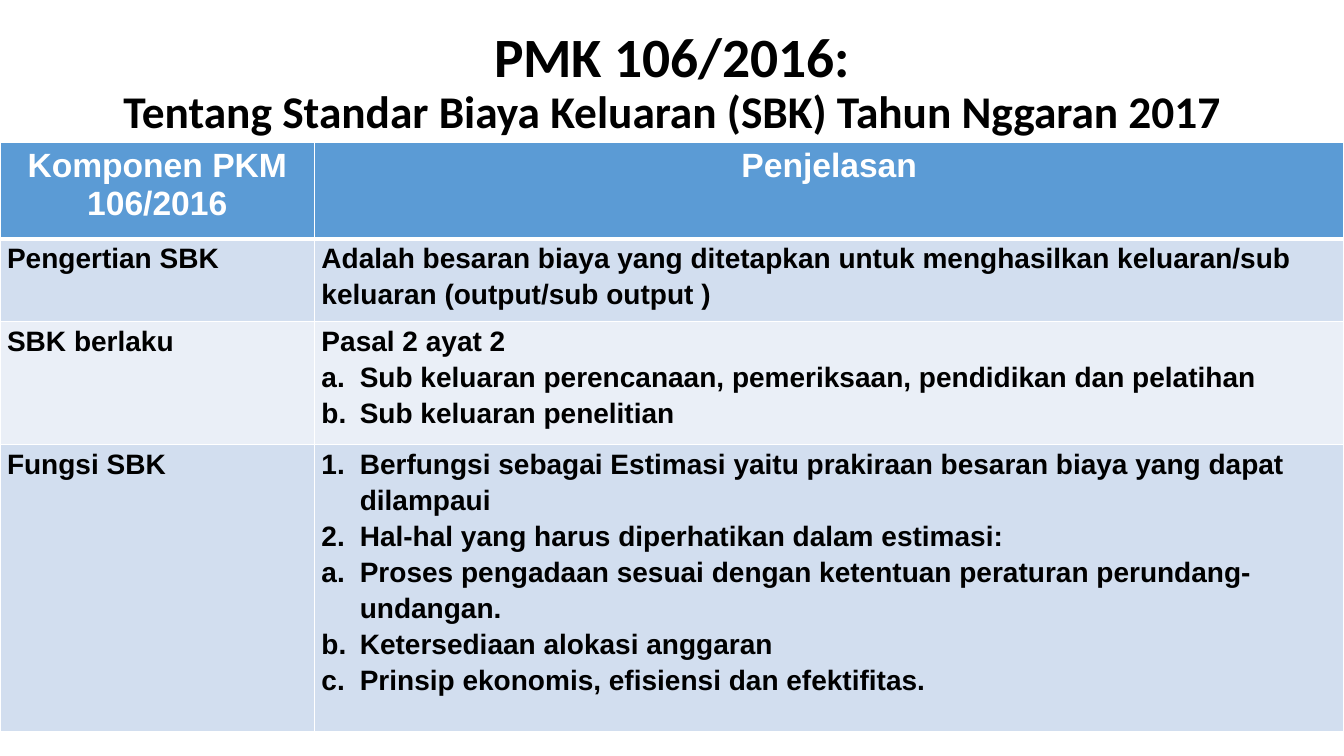
from lxml.etree import SubElement
from pptx import Presentation
from pptx.dml.color import RGBColor as Rgb
from pptx.enum.text import MSO_ANCHOR as Anchor, MSO_AUTO_SIZE as AutoSize, PP_ALIGN as Align
from pptx.oxml import parse_xml
from pptx.oxml.ns import qn
from pptx.util import Inches, Pt

COLORS = {
    "black": "000000",
    "white": "FFFFFF",
    "header": "5B9BD5",
    "odd": "D2DEEF",
    "even": "EAEFF7",
}
NAMESPACE = "http://schemas.openxmlformats.org/drawingml/2006/main"
LETTERS, NUMBERS = "alphaLcPeriod", "arabicPeriod"

COLUMN_SHARES = [23.4, 76.6]
ROW_SHARES = [12.8, 10.93, 16.27, 38]
HEADINGS = ["Komponen PKM 106/2016", "Penjelasan"]
COMPONENTS = [
    ("Pengertian SBK", [
        (None, "Adalah besaran biaya yang ditetapkan untuk menghasilkan keluaran/sub keluaran (output/sub output )"),
    ]),
    ("SBK berlaku", [
        (None, "Pasal 2 ayat 2"),
        (LETTERS, "Sub keluaran perencanaan, pemeriksaan, pendidikan dan pelatihan"),
        (LETTERS, "Sub keluaran penelitian"),
    ]),
    ("Fungsi SBK", [
        (NUMBERS, "Berfungsi sebagai Estimasi yaitu prakiraan besaran biaya yang dapat dilampaui"),
        (NUMBERS, "Hal-hal yang harus diperhatikan dalam estimasi:"),
        (LETTERS, "Proses pengadaan sesuai dengan ketentuan peraturan perundang-undangan."),
        (LETTERS, "Ketersediaan alokasi anggaran"),
        (LETTERS, "Prinsip ekonomis, efisiensi dan efektifitas."),
    ]),
]


def write(para, text, *, size, font="Arial", color="black", align=Align.LEFT, spacing=1.0, numbering=None):
    para.alignment = align
    para.line_spacing = spacing
    span = para.add_run()
    span.text = text
    span.font.name = font
    span.font.size = Pt(size)
    span.font.bold = True
    span.font.color.rgb = Rgb.from_string(COLORS[color])
    if numbering:
        properties = para._p.get_or_add_pPr()
        properties.set("marL", str(Inches(0.38)))
        properties.set("indent", str(-Inches(0.38)))
        SubElement(properties, qn("a:buFont")).set("typeface", "+mj-lt")
        SubElement(properties, qn("a:buAutoNum")).set("type", numbering)


class SlideBuilder:
    def __init__(self, deck):
        self.width = deck.slide_width
        self.height = deck.slide_height
        self.page = deck.slides.add_slide(deck.slide_layouts[6])

    def across(self, percent):
        return round(self.width * percent / 100)

    def down(self, percent):
        return round(self.height * percent / 100)

    def title(self, lines, left, top, width, height):
        box = self.page.shapes.add_textbox(
            self.across(left), self.down(top), self.across(width), self.down(height))
        frame = box.text_frame
        frame.word_wrap = True
        frame.auto_size = AutoSize.NONE
        frame.vertical_anchor = Anchor.MIDDLE
        para = frame.paragraphs[0]
        for index, (text, size) in enumerate(lines):
            if index:
                para.add_line_break()
            write(para, text, size=size, font="Calibri", align=Align.CENTER, spacing=0.9)

    def table(self, left, top, columns, rows):
        frame = self.page.shapes.add_table(
            len(rows), len(columns), self.across(left), self.down(top),
            self.across(sum(columns)), self.down(sum(rows)))
        grid = frame.table
        for column, share in zip(grid.columns, columns):
            column.width = self.across(share)
        for row, share in zip(grid.rows, rows):
            row.height = self.down(share)
        return grid

    def cell(self, cell, fill, items, *, top_line=1, bottom_line=1, margin=None, **style):
        cell.fill.solid()
        cell.fill.fore_color.rgb = Rgb.from_string(COLORS[fill])
        if margin is not None:
            cell.margin_left = cell.margin_right = Inches(margin)
            cell.margin_top = cell.margin_bottom = 0
        widths = {"lnL": 1, "lnR": 1, "lnT": top_line, "lnB": bottom_line}
        for position, (side, width) in enumerate(widths.items()):
            border = parse_xml(
                f'<a:{side} xmlns:a="{NAMESPACE}" w="{Pt(width)}"><a:solidFill>'
                f'<a:srgbClr val="{COLORS["white"]}"/></a:solidFill></a:{side}>')
            cell._tc.get_or_add_tcPr().insert(position, border)
        frame = cell.text_frame
        for index, (numbering, text) in enumerate(items):
            para = frame.add_paragraph() if index else frame.paragraphs[0]
            write(para, text, numbering=numbering, **style)


def main():
    deck = Presentation()
    deck.slide_width, deck.slide_height = Inches(13.33), Inches(7.5)
    slide = SlideBuilder(deck)
    slide.title(
        [("PMK 106/2016:", 39.6), ("Tentang Standar Biaya Keluaran (SBK) Tahun Nggaran 2017", 32.4)],
        left=6.9, top=5.33, width=86.25, height=11.6)
    grid = slide.table(0, 18.8, COLUMN_SHARES, ROW_SHARES)
    for column, heading in enumerate(HEADINGS):
        slide.cell(grid.cell(0, column), "header", [(None, heading)],
                   bottom_line=3, size=24, color="white", align=Align.CENTER)
    for row, (component, details) in enumerate(COMPONENTS, start=1):
        for column, items in enumerate([[(None, component)], details]):
            slide.cell(grid.cell(row, column), "odd" if row % 2 else "even", items,
                       top_line=3 if row == 1 else 1, margin=0.07, size=20, spacing=1.15)
    deck.save("out.pptx")


if __name__ == "__main__":
    main()
